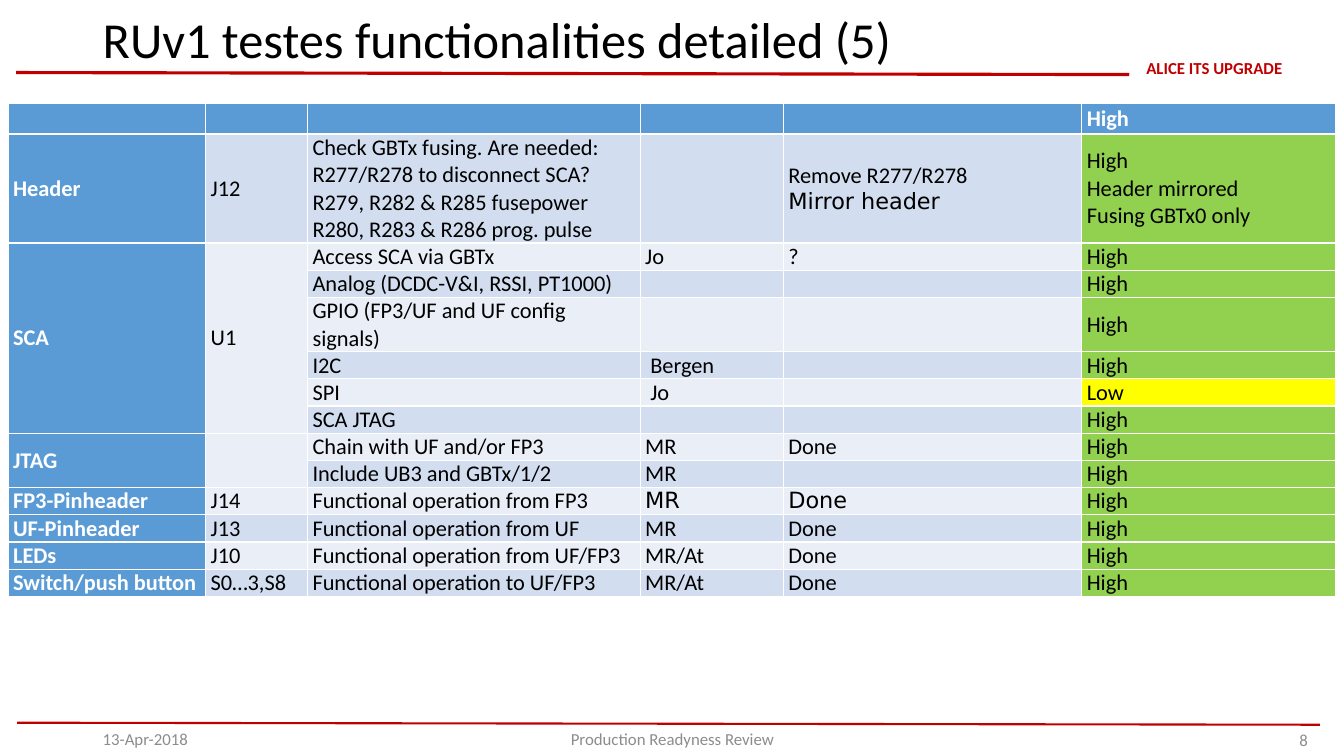
import pptx
import pptx.dml.color
import pptx.enum.shapes
import pptx.enum.text
import pptx.util
from lxml import etree

SIZE = (13.33, 7.5)
RED, GREY, BLACK, WHITE = "C00000", "8C8C8C", "000000", "FFFFFF"
BLUE, BANDS = "5B9BD5", ("D2DEEF", "EAEFF7")
LEVELS = {"High": "92D050", "Low": "FFFF00"}
LEFT, CENTRE, RIGHT = (getattr(pptx.enum.text.PP_ALIGN, n) for n in ("LEFT", "CENTER", "RIGHT"))

RULES = [
    ((0.16, 0.72), (11.2, 0.74), 2.25),
    ((13.09, 7.19), (0.17, 7.17), 1.5),
]
LABELS = [
    ("ALICE ITS UPGRADE", (11.33, 0.58, 1.43, 0.19), 12, RED, CENTRE, True, 0),
    ("RUv1 testes functionalities detailed (5)", (0.92, 0.06, 10.28, 0.72), 36, BLACK, LEFT, False, 0.1),
    ("13-Apr-2018", (0.92, 7.19, 3, 0.28), 12, GREY, LEFT, False, 0.1),
    ("Production Readyness Review", (4.42, 7.19, 4.5, 0.28), 12, GREY, CENTRE, False, 0.1),
    ("8", (11.55, 7.2, 1.52, 0.28), 12, GREY, RIGHT, False, 0.1),
]
TABLE_AT = (0.08, 1.03)
COLUMNS = (1.96, 1.01, 3.3, 1.42, 2.96, 2.52)
LINE_HEIGHT, HEADING_HEIGHT = 0.27, 0.3
ROWS = [
    ("", "", "", "", "", "High"),
    ("Header", "J12",
     "Check GBTx fusing. Are needed:\nR277/R278 to disconnect SCA?\n"
     "R279, R282 & R285 fusepower\nR280, R283 & R286 prog. pulse",
     "", "Remove R277/R278\nMirror header", "High\nHeader mirrored\nFusing GBTx0 only"),
    ("SCA", "U1", "Access SCA via GBTx", "Jo", "?", "High"),
    ("", "", "Analog (DCDC-V&I, RSSI, PT1000)", "", "", "High"),
    ("", "", "GPIO (FP3/UF and UF config signals)", "", "", "High"),
    ("", "", "I2C", " Bergen", "", "High"),
    ("", "", "SPI", " Jo", "", "Low"),
    ("", "", "SCA JTAG", "", "", "High"),
    ("JTAG", "", "Chain with UF and/or FP3", "MR", "Done", "High"),
    ("", "", "Include UB3 and GBTx/1/2", "MR", "", "High"),
    ("FP3-Pinheader", "J14", "Functional operation from FP3", "MR", "Done", "High"),
    ("UF-Pinheader", "J13", "Functional operation from UF", "MR", "Done", "High"),
    ("LEDs", "J10", "Functional operation from UF/FP3", "MR/At", "Done", "High"),
    ("Switch/push button", "S0…3,S8", "Functional operation to UF/FP3", "MR/At", "Done", "High"),
]
ROW_LINES = {1: 4, 4: 2}
MERGES = [(2, 7), (8, 9)]
DEJAVU_AT = {(1, 4, 1), (10, 3, 0), (10, 4, 0)}


def rgb(value):
    """Turn a hex string into a colour."""
    return pptx.dml.color.RGBColor.from_string(value)


def inches(values):
    """Convert a sequence of inch values to lengths."""
    return [pptx.util.Inches(v) for v in values]


def style(p, size, color, bold=False, name="Calibri"):
    """Set the font of a paragraph."""
    p.font.size, p.font.bold, p.font.name = pptx.util.Pt(size), bold, name
    p.font.color.rgb = rgb(color)


def add_rule(s, start, end, width):
    """Draw one red rule."""
    line = s.shapes.add_connector(pptx.enum.shapes.MSO_CONNECTOR.STRAIGHT, *inches(start + end))
    line.line.color.rgb = rgb(RED)
    line.line.width = pptx.util.Pt(width)
    sp_pr = line._element.spPr
    etree.SubElement(sp_pr, pptx.oxml.ns.qn("a:effectLst"))


def add_label(s, text, box, size, color, align, bold, inset):
    """Place one line of text in a box."""
    tf = s.shapes.add_textbox(*inches(box)).text_frame
    tf.word_wrap = True
    tf.vertical_anchor = pptx.enum.text.MSO_ANCHOR.MIDDLE
    tf.margin_left, tf.margin_right, tf.margin_top, tf.margin_bottom = inches((inset, inset, inset / 2, inset / 2))
    p = tf.paragraphs[0]
    p.text, p.alignment = text, align
    if size > 12:
        p.line_spacing = 0.9
    style(p, size, color, bold)


def cell_fill(row, col, text):
    """Choose a cell's fill from its place and its level."""
    if row == 0 or col == 0:
        return BLUE
    if col == len(COLUMNS) - 1:
        return LEVELS[text.split("\n")[0]]
    return BANDS[(row + 1) % 2]


def add_table(s):
    """Build the table of tested functions."""
    heights = [HEADING_HEIGHT] + [LINE_HEIGHT * ROW_LINES.get(i, 1) for i in range(1, len(ROWS))]
    box = inches(TABLE_AT + (sum(COLUMNS), sum(heights)))
    table = s.shapes.add_table(len(ROWS), len(COLUMNS), *box).table
    table.first_col = True
    for column, width in zip(table.columns, inches(COLUMNS)):
        column.width = width
    for row, height in zip(table.rows, inches(heights)):
        row.height = height
    for i, row in enumerate(ROWS):
        for j, text in enumerate(row):
            cell = table.cell(i, j)
            cell.text = text
            cell.vertical_anchor = pptx.enum.text.MSO_ANCHOR.MIDDLE
            cell.margin_left, cell.margin_right, cell.margin_top, cell.margin_bottom = inches((0.05, 0.05, 0, 0))
            cell.fill.solid()
            cell.fill.fore_color.rgb = rgb(cell_fill(i, j, text))
            heading = i == 0 or j == 0
            for k, p in enumerate(cell.text_frame.paragraphs):
                name = "DejaVu Sans" if (i, j, k) in DEJAVU_AT else "Calibri"
                style(p, 16, WHITE if heading else BLACK, heading, name)
    for first, last in MERGES:
        for j in range(2):
            table.cell(first, j).merge(table.cell(last, j))


def main():
    """Build the slide and save it."""
    prs = pptx.Presentation()
    prs.slide_width, prs.slide_height = inches(SIZE)
    s = prs.slides.add_slide(prs.slide_layouts[6])
    for rule in RULES:
        add_rule(s, *rule)
    for label in LABELS:
        add_label(s, *label)
    add_table(s)
    prs.save("out.pptx")


if __name__ == "__main__":
    main()
